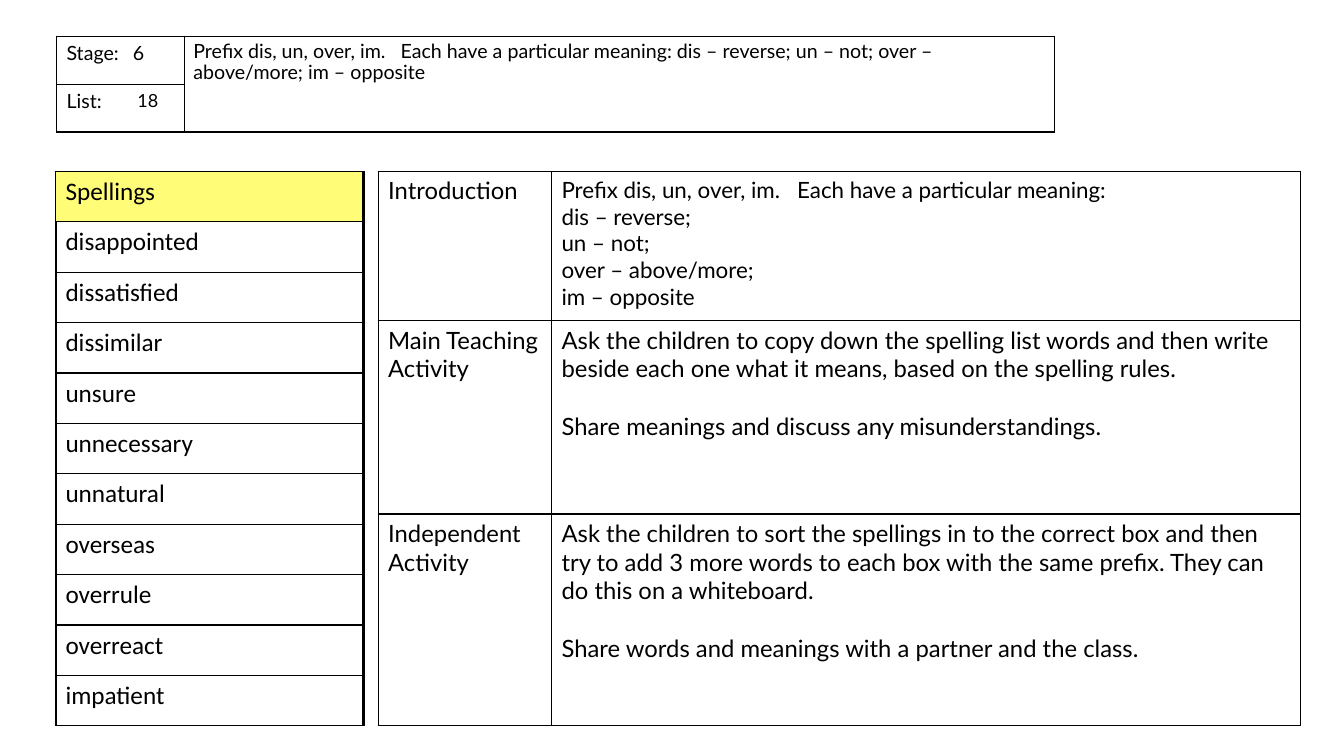
from dataclasses import dataclass, replace

from lxml.etree import SubElement
from pptx import Presentation
from pptx.dml.color import RGBColor
from pptx.enum.shapes import MSO_SHAPE as Shape
from pptx.oxml.ns import qn
from pptx.util import Emu, Inches, Pt

STEP = Inches(0.1)  # side of one square of the layout grid
BLACK, WHITE, YELLOW = "000000", "FFFFFF", "FFFD78"
BODY, HEAD = "Lato", "Calibri"
WORDS = """Spellings disappointed dissatisfied dissimilar unsure unnecessary
unnatural overseas overrule overreact impatient""".split()
RULE = "Prefix dis, un, over, im.   Each have a particular meaning:"


@dataclass
class Text:
    lines: str
    size: float
    font: str = BODY
    gap: float = 0  # points before each later paragraph
    fill: str = ""


@dataclass
class Grid:
    left: float
    top: float
    cols: list[float]
    rows: list[float]
    cells: list[list[Text | None]]


@dataclass
class Label:
    left: float
    top: float
    width: float
    height: float
    text: Text


HEADER = Grid(5.6, 3.6, [12.7, 86.3], [4.75] * 2,
              [[Text("Stage:", 14), None], [Text("List:", 14), None]])

LESSON = Grid(37.5, 17, [17.2, 74.3], [14.8, 19.2, 21], [
    [Text("Introduction", 17),
     Text(f"{RULE} \vdis – reverse; \vun – not; \vover – above/more; \vim – opposite", 16)],
    [Text("Main Teaching Activity", 17),
     Text("Ask the children to copy down the spelling list words and then write "
          "beside each one what it means, based on the spelling rules. \v\v"
          "Share meanings and discuss any misunderstandings.", 17)],
    [Text("Independent Activity", 17),
     Text("Ask the children to sort the spellings in to the correct box and then "
          "try to add 3 more words to each box with the same prefix. They can "
          "do this on a whiteboard.\n"
          "Share words and meanings with a partner and the class.", 17, gap=20.8)],
])

SPELLINGS = Grid(5.5, 17, [30.5], [5] * len(WORDS), [
    [Text(word, 18, HEAD, fill="" if row else YELLOW)]
    for row, word in enumerate(WORDS)])
# Bare rules just right of the word list, which thicken its outline
RULING = replace(SPELLINGS, left=5.6, cells=[[None] for _ in WORDS])

LABELS = [
    Label(12.2, 3.8, 4.7, 4, Text("6", 14)),
    Label(12.65, 8.6, 4.7, 4, Text("18", 12.9)),
    Label(18.2, 3.6, 86.4, 9.5,
          Text(f"{RULE} dis – reverse; un – not; over – above/more; im – opposite", 14)),
]


def steps(count: float) -> Emu:
    return Emu(round(count * STEP))


def color(code: str) -> RGBColor:
    return RGBColor.from_string(code)


def write(frame, text: Text, pitch: float | None = None) -> None:
    frame.word_wrap = True
    frame.text = text.lines
    for i, para in enumerate(frame.paragraphs):
        para.line_spacing = pitch
        if i and text.gap:
            para.space_before = Pt(text.gap)
        para.font.size = Pt(text.size)
        for run in para.runs:
            run.font.size = Pt(text.size)
            run.font.name = text.font
            run.font.color.rgb = color(BLACK)
        for stop in para._p.findall(qn("a:br")):
            SubElement(stop, qn("a:rPr"), sz=str(round(text.size * 100)))


def border(cell) -> None:
    props = cell._tc.get_or_add_tcPr()
    for side in ("lnL", "lnR", "lnT", "lnB"):
        line = SubElement(props, qn(f"a:{side}"), w=str(Pt(1)))
        fill = SubElement(line, qn("a:solidFill"))
        SubElement(fill, qn("a:srgbClr"), val=BLACK)


def draw_panel(slide) -> None:
    """Lay the translucent white sheet that carries the page."""
    panel = slide.shapes.add_shape(Shape.RECTANGLE, steps(1.7), steps(1.5),
                                   steps(130), steps(72.2))
    panel.shadow.inherit = False
    panel.fill.solid()
    panel.fill.fore_color.rgb = color(WHITE)
    tint = panel._element.spPr.find(qn("a:solidFill"))[0]
    SubElement(tint, qn("a:alpha"), val="90000")
    panel.line.color.rgb = color(WHITE)
    panel.line.width = Pt(1)


def draw_grid(slide, grid: Grid):
    frame = slide.shapes.add_table(
        len(grid.rows), len(grid.cols), steps(grid.left), steps(grid.top),
        steps(sum(grid.cols)), steps(sum(grid.rows)))
    table = frame.table
    table.first_row = table.horz_banding = False
    for col, width in zip(table.columns, grid.cols):
        col.width = steps(width)
    for row, height, texts in zip(table.rows, grid.rows, grid.cells):
        row.height = steps(height)
        for cell, text in zip(row.cells, texts):
            border(cell)
            if text and text.fill:
                cell.fill.solid()
                cell.fill.fore_color.rgb = color(text.fill)
            else:
                cell.fill.background()
            if text:
                write(cell.text_frame, text)
    return table


def draw_label(slide, label: Label) -> None:
    box = slide.shapes.add_textbox(steps(label.left), steps(label.top),
                                   steps(label.width), steps(label.height))
    write(box.text_frame, label.text, 0.9)


def main() -> None:
    deck = Presentation()
    deck.slide_width, deck.slide_height = Inches(13.33), Inches(7.5)
    slide = deck.slides.add_slide(deck.slide_layouts[6])
    draw_panel(slide)
    header = draw_grid(slide, HEADER)
    header.cell(0, 1).merge(header.cell(1, 1))
    draw_grid(slide, RULING)
    for label in LABELS:
        draw_label(slide, label)
    for grid in (LESSON, SPELLINGS):
        draw_grid(slide, grid)
    deck.save("out.pptx")


if __name__ == "__main__":
    main()
